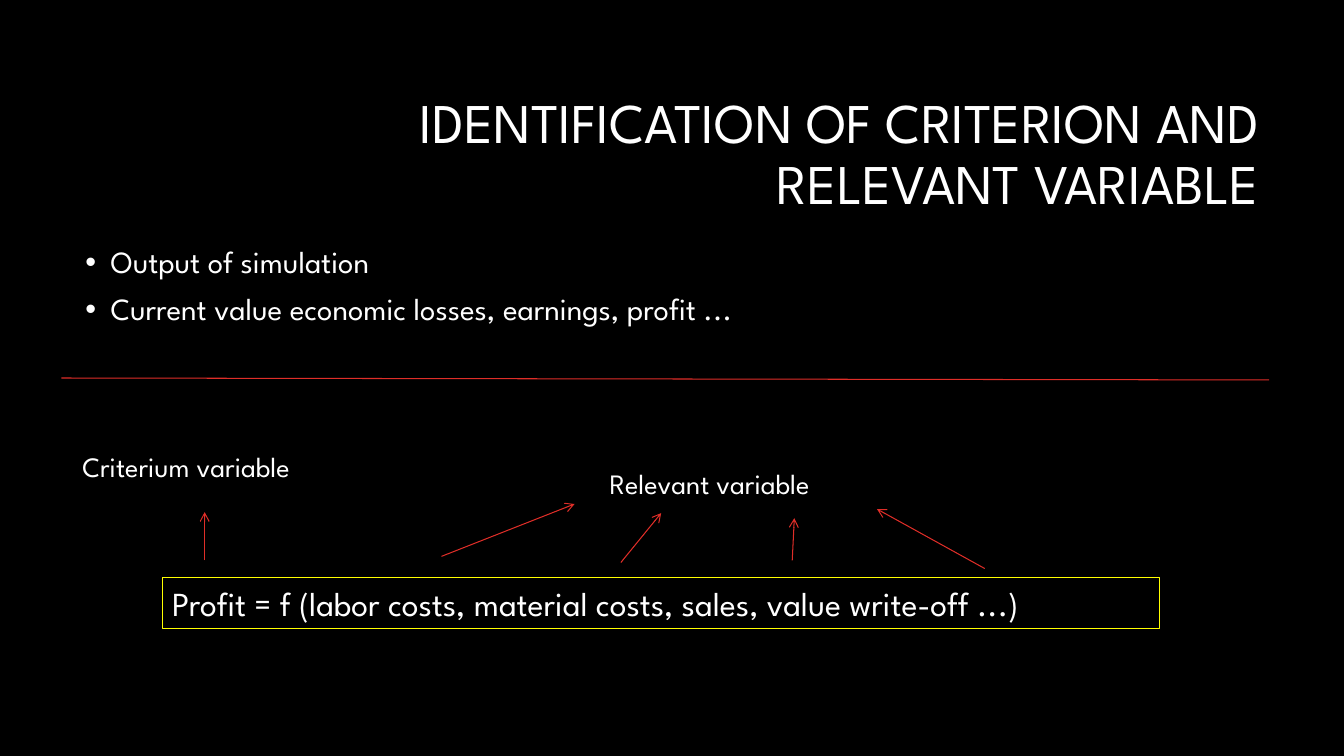
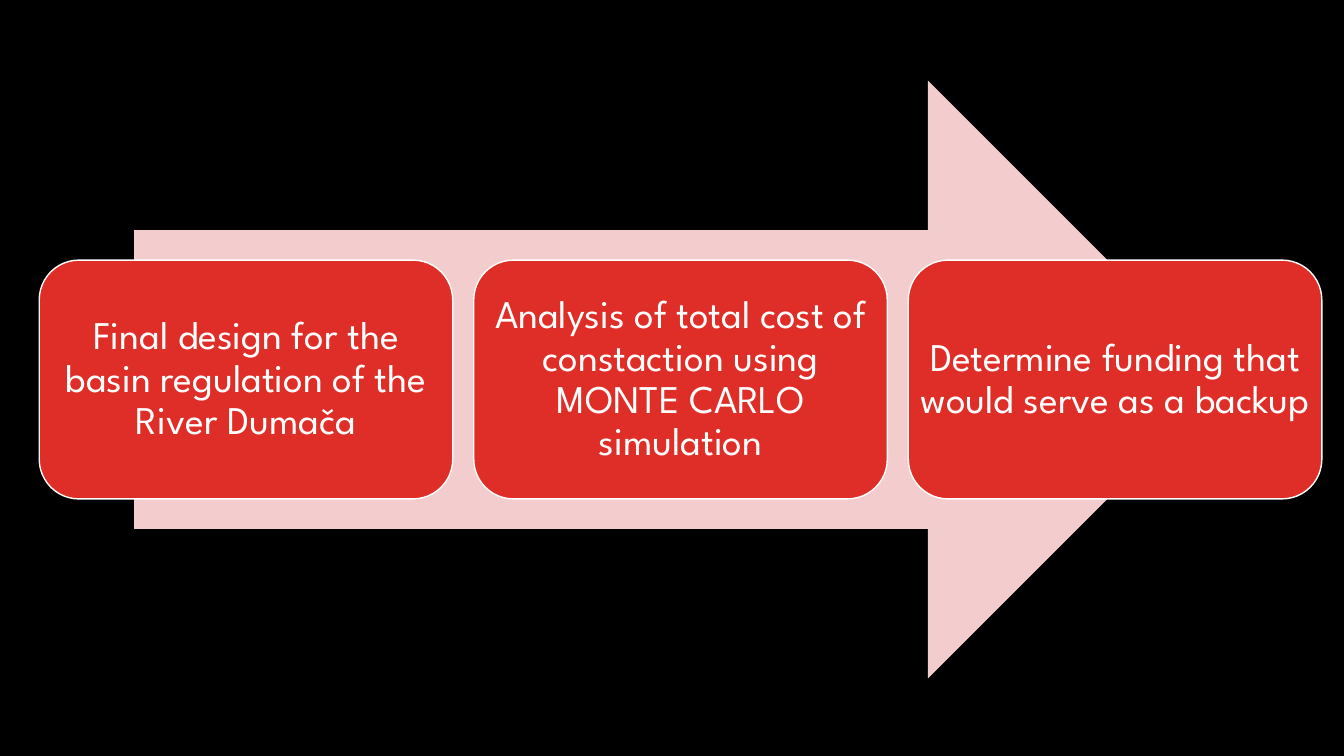
import pptx
import pptx.util
import pptx.dml.color
import pptx.enum.shapes
import pptx.enum.text
import pptx.oxml
import pptx.oxml.ns
from pptx.util import Pt

# Content
TITLE = "IDENTIFICATION OF CRITERION AND RELEVANT VARIABLE"
OUTPUTS = ["Output of simulation",
           "Current value economic losses, earnings, profit ..."]
FORMULA = "Profit = f (labor costs, material costs, sales, value write-off ...)"
LABELS = [("Criterium variable", (51.8, 317.5, 188, 31.7)),
          ("Relevant variable", (428.4, 329.8, 355.7, 31.7))]
DIVIDER = (43.9, 270, 906.5, 271.4)
# From a term of the formula (x, y) to its label (x, y)
TERM_ARROWS = [(146.2, 400.3, 146.2, 365.8),
               (315.4, 397.4, 410.4, 360),
               (443.5, 401.8, 472.3, 366.5),
               (565.9, 400.3, 567.4, 370.1),
               (703.4, 406.1, 626.4, 363.6)]
STEPS = ["Final design for the basin regulation of the River Dumača",
         "Analysis of total cost of constaction using MONTE CARLO simulation",
         "Determine funding that would serve as a backup"]

# Shared style
FONT = "League Spartan"
BLACK, WHITE, RED, PINK, YELLOW = "000000", "FFFFFF", "DF2E28", "F3CDCD", "FFFF00"
ALIGN = pptx.enum.text.PP_ALIGN
ANCHOR = pptx.enum.text.MSO_ANCHOR
SHAPE = pptx.enum.shapes.MSO_SHAPE


def color(hex_code):
    return pptx.dml.color.RGBColor.from_string(hex_code)


def points(values):
    return [Pt(value) for value in values]


def add_element(parent, tag, **attributes):
    element = pptx.oxml.parse_xml(f"<a:{tag} {pptx.oxml.ns.nsdecls('a')}/>")
    for name, value in attributes.items():
        element.set(name, value)
    parent.append(element)


def add_slide(deck):
    slide = deck.slides.add_slide(deck.slide_layouts[6])
    slide.background.fill.solid()
    slide.background.fill.fore_color.rgb = color(BLACK)
    return slide


def write(shape, lines, size, align=ALIGN.LEFT, anchor=ANCHOR.TOP,
          spacing=1.0, bullets=False):
    frame = shape.text_frame
    frame.word_wrap = True
    frame.vertical_anchor = anchor
    for index, line in enumerate(lines):
        paragraph = frame.add_paragraph() if index else frame.paragraphs[0]
        paragraph.alignment = align
        paragraph.line_spacing = spacing
        if index:
            paragraph.space_before = Pt(10)
        if bullets:
            properties = paragraph._p.get_or_add_pPr()
            properties.set("marL", str(Pt(18)))
            properties.set("indent", str(-Pt(18)))
            add_element(properties, "buFont", typeface="Arial")
            add_element(properties, "buChar", char="•")
        run = paragraph.add_run()
        run.text = line
        run.font.name = FONT
        run.font.size = Pt(size)
        run.font.color.rgb = color(WHITE)


def add_text(slide, box, lines, size, **style):
    write(slide.shapes.add_textbox(*points(box)), lines, size, **style)


def add_shape(slide, kind, box, fill=None, line=None, width=0.75):
    shape = slide.shapes.add_shape(kind, *points(box))
    shape.shadow.inherit = False
    if fill:
        shape.fill.solid()
        shape.fill.fore_color.rgb = color(fill)
    else:
        shape.fill.background()
    if line:
        shape.line.color.rgb = color(line)
        shape.line.width = Pt(width)
    else:
        shape.line.fill.background()
    return shape


def add_line(slide, ends, arrow=False):
    connector = slide.shapes.add_connector(
        pptx.enum.shapes.MSO_CONNECTOR.STRAIGHT, *points(ends))
    connector.line.color.rgb = color(RED)
    connector.line.width = Pt(0.75)
    if arrow:
        add_element(connector.line._get_or_add_ln(), "tailEnd", type="arrow")
    add_element(connector._element.spPr, "effectLst")


def build_variables(deck):
    slide = add_slide(deck)
    add_text(slide, (228.2, 60.5, 678.2, 101.5), [TITLE], 40,
             align=ALIGN.RIGHT, anchor=ANCHOR.MIDDLE, spacing=0.9)
    add_text(slide, (54, 172.8, 851.8, 316.8), OUTPUTS, 22,
             spacing=0.9, bullets=True)
    add_line(slide, DIVIDER)

    # Formula with arrows up to the labels
    formula = add_shape(slide, SHAPE.RECTANGLE, (115.9, 412.6, 712.1, 36.3),
                        line=YELLOW)
    write(formula, [FORMULA], 24)
    for ends in TERM_ARROWS:
        add_line(slide, ends, arrow=True)
    for label, box in LABELS:
        add_text(slide, box, [label], 20)


def build_process(deck):
    slide = add_slide(deck)
    add_shape(slide, SHAPE.RIGHT_ARROW, (95.8, 57.6, 780.5, 427), fill=PINK)

    # Equal steps along the arrow
    left, top, width, height, gap = 28, 185.8, 295.4, 170.6, 15
    for index, step in enumerate(STEPS):
        box = (left + index * (width + gap), top, width, height)
        card = add_shape(slide, SHAPE.ROUNDED_RECTANGLE, box, RED, WHITE, 1)
        frame = card.text_frame
        frame.margin_left = frame.margin_right = 0
        frame.margin_top = frame.margin_bottom = 0
        write(card, [step], 28, align=ALIGN.CENTER, anchor=ANCHOR.MIDDLE,
              spacing=0.9)


def main():
    deck = pptx.Presentation()
    deck.slide_width, deck.slide_height = Pt(960), Pt(540)
    build_variables(deck)
    build_process(deck)
    deck.save("out.pptx")


if __name__ == "__main__":
    main()
